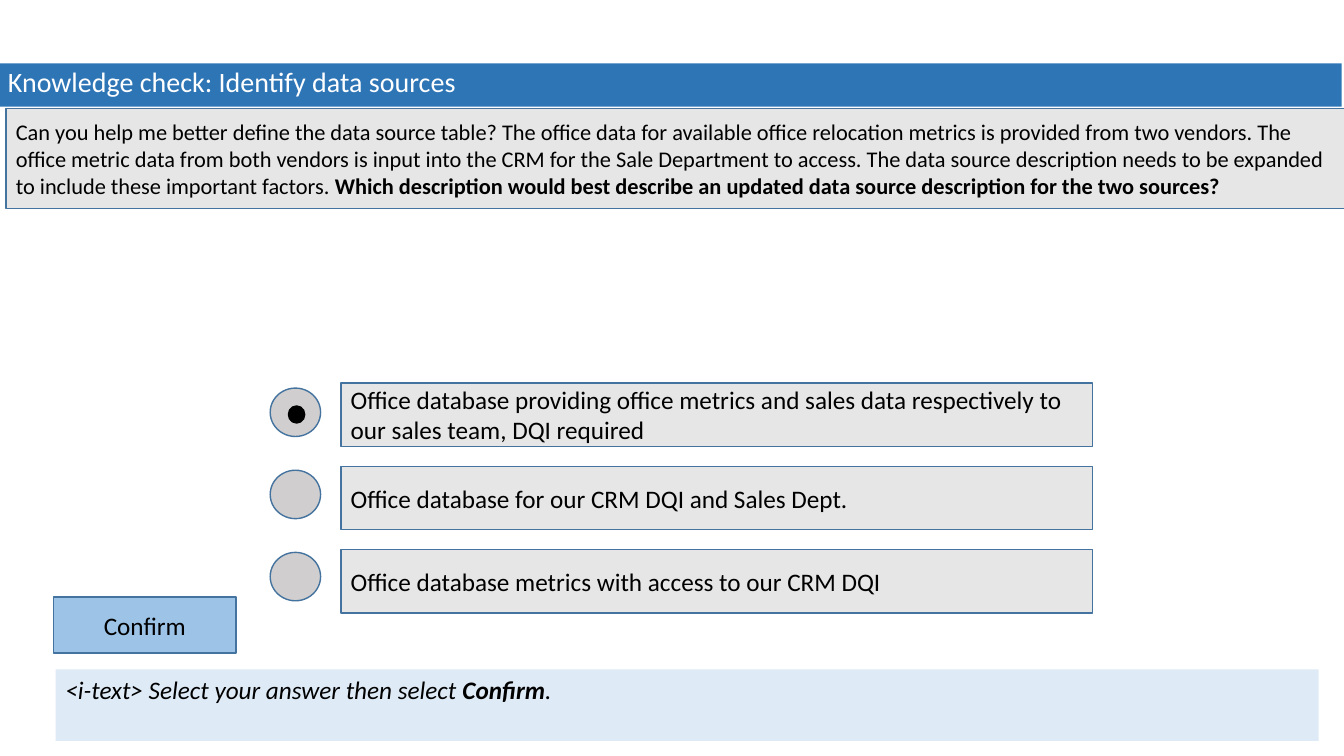
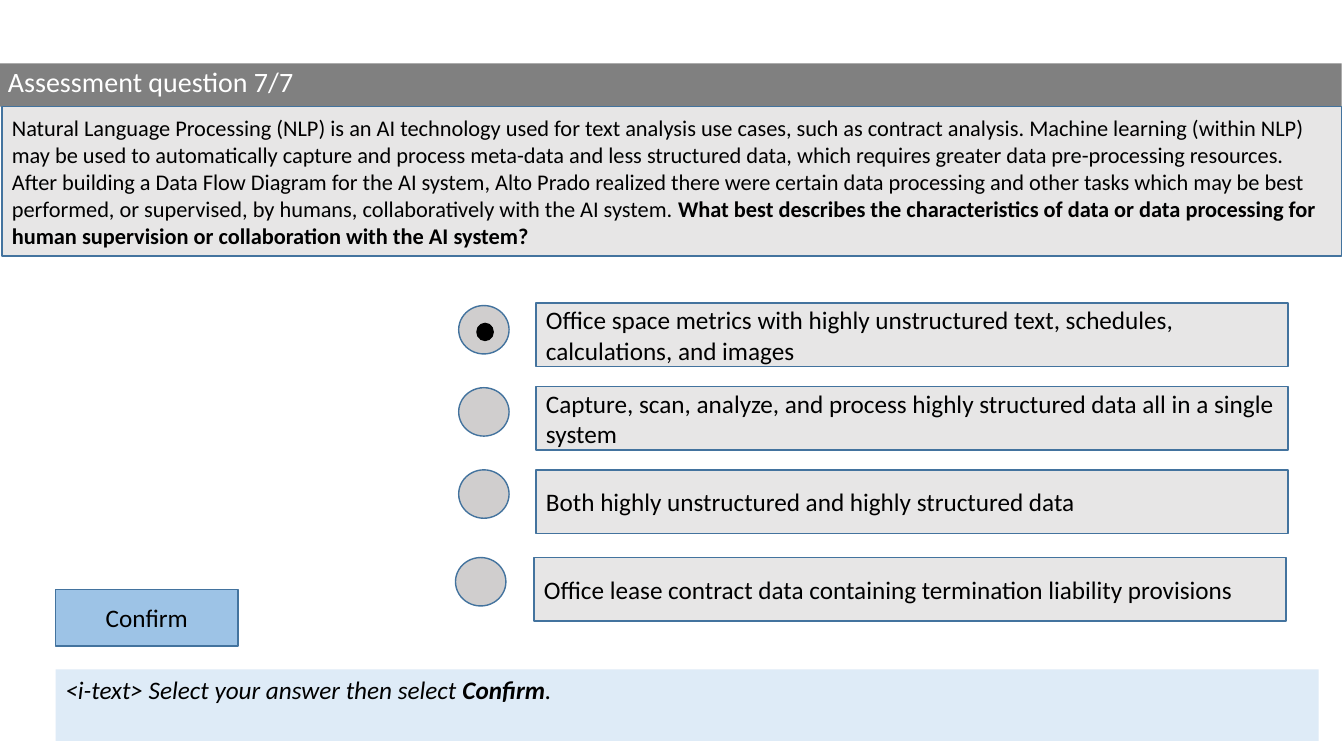
from pptx import Presentation
from pptx import util as u
from pptx.dml import color
from pptx.enum import shapes, text

COLORS = {
    "blue": "2E75B6",
    "gray": "808080",
    "panel": "E7E6E6",
    "dial": "D0CECE",
    "button": "9DC3E6",
    "prompt": "DEEBF7",
    "outline": "43739E",
    "black": "000000",
    "white": "FFFFFF",
}
RECT = shapes.MSO_SHAPE.RECTANGLE
OVAL = shapes.MSO_SHAPE.OVAL


def rgb(name):
    return color.RGBColor.from_string(COLORS[name])


class Quiz:
    font = "Calibri"
    answer_pitch = 2.1
    dial_pitch = 2.07

    def __init__(self):
        self.deck = Presentation()
        self.deck.slide_width = u.Cm(33.87)
        self.deck.slide_height = u.Cm(19.05)
        self.slide = None

    def new_slide(self, title, band):
        self.slide = self.deck.slides.add_slide(self.deck.slide_layouts[6])
        self.prompt()
        self.title(title, band)

    def block(self, kind, left, top, width, height, fill, outline="outline"):
        block = self.slide.shapes.add_shape(
            kind, u.Cm(left), u.Cm(top), u.Cm(width), u.Cm(height))
        block.shadow.inherit = False
        block.fill.solid()
        block.fill.fore_color.rgb = rgb(fill)
        if outline:
            block.line.color.rgb = rgb(outline)
            block.line.width = u.Pt(1)
        else:
            block.line.fill.background()
        return block

    def label(self, block, parts, size=18, ink="black", middle=True,
              align=text.PP_ALIGN.LEFT):
        frame = block.text_frame
        frame.word_wrap = True
        frame.vertical_anchor = text.MSO_ANCHOR.MIDDLE if middle else text.MSO_ANCHOR.TOP
        paragraph = frame.paragraphs[0]
        paragraph.alignment = align
        paragraph.font.name = self.font
        paragraph.font.size = u.Pt(size)
        paragraph.font.color.rgb = rgb(ink)
        for wording, bold in parts:
            run = paragraph.add_run()
            run.text = wording
            if bold:
                run.font.bold = True
        return paragraph

    def title(self, wording, band):
        bar = self.block(RECT, -0.05, 1.6, 33.86, 1.09, band, None)
        self.label(bar, [(wording, False)], 20, "white", False).line_spacing = 0.9

    def prompt(self):
        strip = self.block(RECT, 1.4, 16.87, 31.83, 1.8, "prompt", None)
        parts = [("<i-text> Select your answer then select ", False),
                 ("Confirm", True), (".", False)]
        self.label(strip, parts, middle=False).font.italic = True

    def question(self, left, top, height, context, ask):
        panel = self.block(RECT, left, top, 33.76, height, "panel")
        self.label(panel, [(context, False), (ask, True)], 16)

    def confirm(self, left, top):
        button = self.block(RECT, left, top, 4.6, 1.42, "button")
        self.label(button, [("Confirm", False)], align=text.PP_ALIGN.CENTER)

    def answers(self, left, top, dial_left, dial_top, choices):
        for row, choice in enumerate(choices):
            answer = self.block(
                RECT, left, top + row * self.answer_pitch, 18.95, 1.6, "panel")
            self.label(answer, [(choice, False)])
            self.block(OVAL, dial_left, dial_top + row * self.dial_pitch,
                       1.27, 1.22, "dial")

    def mark(self, dial_left, dial_top):
        self.block(OVAL, dial_left + 0.46, dial_top + 0.45, 0.41, 0.43,
                   "black", "black")


def main():
    quiz = Quiz()

    quiz.new_slide("Knowledge check: Identify data sources", "blue")
    quiz.question(
        0.15, 2.74, 2.51,
        "Can you help me better define the data source table? The office data for "
        "available office relocation metrics is provided from two vendors. The office "
        "metric data from both vendors is input into the CRM for the Sale Department to "
        "access. The data source description needs to be expanded to include these "
        "important factors. ",
        "Which description would best describe an updated data source description for "
        "the two sources?")
    quiz.answers(8.59, 9.65, 6.81, 9.78, [
        "Office database providing office metrics and sales data respectively to our "
        "sales team, DQI required",
        "Office database for our CRM DQI and Sales Dept.",
        "Office database metrics with access to our CRM DQI",
    ])
    quiz.mark(6.81, 9.78)
    quiz.confirm(1.35, 15.04)

    quiz.new_slide("Assessment question 7/7", "gray")
    quiz.question(
        0.05, 2.69, 3.76,
        "Natural Language Processing (NLP) is an AI technology used for text analysis "
        "use cases, such as contract analysis. Machine learning (within NLP) may be used "
        "to automatically capture and process meta-data and less structured data, which "
        "requires greater data pre-processing resources. After building a Data Flow "
        "Diagram for the AI system, Alto Prado realized there were certain data "
        "processing and other tasks which may be best performed, or supervised, by "
        "humans, collaboratively with the AI system. ",
        "What best describes the characteristics of data or data processing for human "
        "supervision or collaboration with the AI system?")
    quiz.answers(13.51, 7.64, 11.56, 7.7, [
        "Office space metrics with highly unstructured text, schedules, calculations, "
        "and images",
        "Capture, scan, analyze, and process highly structured data all in a single system",
        "Both highly unstructured and highly structured data",
    ])
    quiz.mark(11.56, 7.7)
    quiz.answers(13.46, 14.05, 11.48, 14.05, [
        "Office lease contract data containing termination liability provisions",
    ])
    quiz.confirm(1.4, 14.86)

    quiz.deck.save("out.pptx")


if __name__ == "__main__":
    main()
